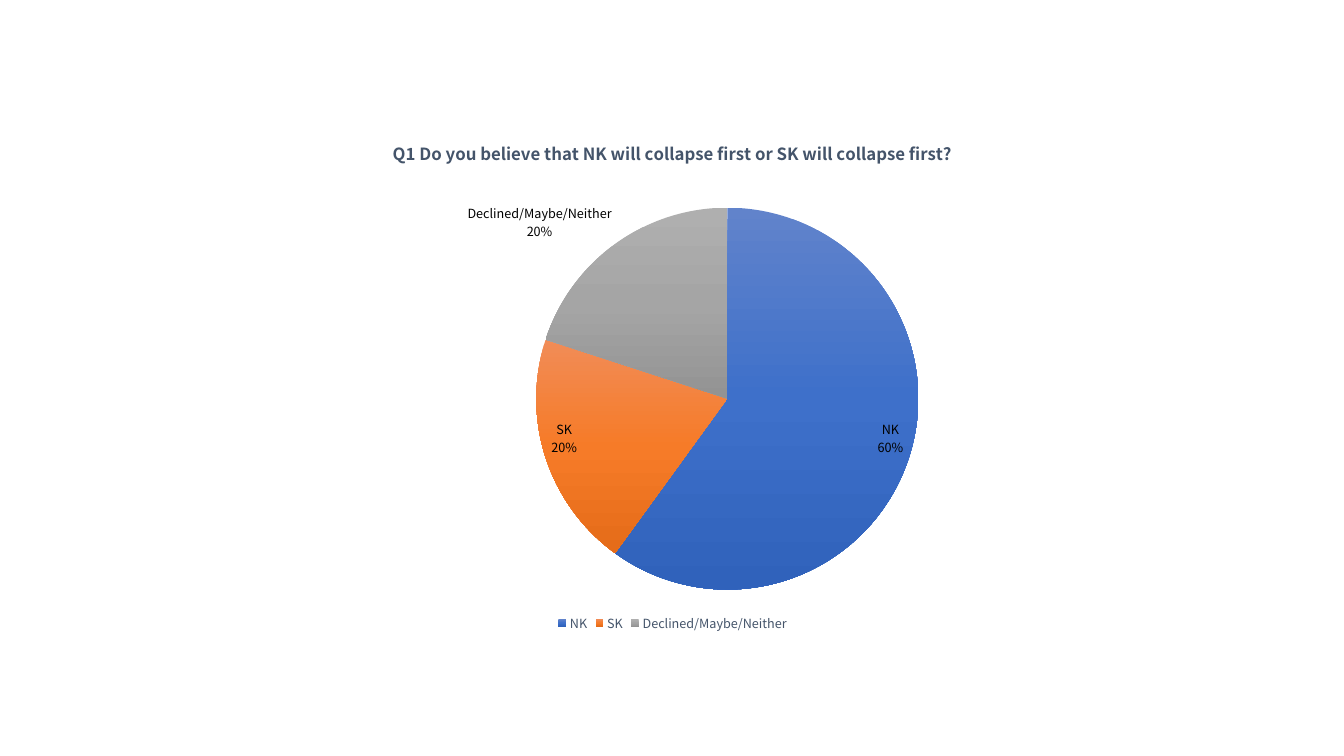
import pptx
import pptx.util
import pptx.chart.data
import pptx.dml.color
import pptx.enum.chart
import pptx.oxml
import pptx.oxml.ns
from lxml import etree

FONT = "Noto Sans CJK KR"
COLORS = {"label": "000000", "heading": "44546A"}
QUESTION = "Q1 Do you believe that NK will collapse first or SK will collapse first?"
LabelPosition = pptx.enum.chart.XL_LABEL_POSITION
ANSWERS = [
    ("NK", 60, ("6183CB", "3E70CA", "3062BB"), LabelPosition.INSIDE_END),
    ("SK", 20, ("F18C57", "F67B28", "E56C19"), LabelPosition.INSIDE_END),
    ("Declined/Maybe/Neither", 20, ("AFAFAF", "A5A5A5", "939393"), LabelPosition.OUTSIDE_END),
]
PIE_LAYOUT = {"xMode": "edge", "yMode": "edge", "x": 0.35, "y": 0.17, "w": 0.42, "h": 0.74}
LABEL_PARTS = {"showVal": "0", "showCatName": "1", "showPercent": "1"}


def style_font(font, size, color, bold=False):
    """Apply the slide's font with a size, colour and weight."""
    formats = {"name": FONT, "size": pptx.util.Pt(size), "bold": bold}
    for attribute, value in formats.items():
        setattr(font, attribute, value)
    font.color.rgb = pptx.dml.color.RGBColor.from_string(COLORS[color])


def add_child(parent, tag, **attributes):
    """Append a namespaced element to a parent."""
    return etree.SubElement(parent, pptx.oxml.ns.qn(tag), **attributes)


def shade_slice(fill, stops_list, shades):
    """Run evenly spaced shades down a slice."""
    fill.gradient_angle = 270
    for stop in list(stops_list):
        stops_list.remove(stop)
    for index, shade in enumerate(shades):
        stop = add_child(stops_list, "a:gs", pos=str(index * 50000))
        add_child(stop, "a:srgbClr", val=shade)


def format_slices(chart):
    """Colour each slice and label it with its answer and share."""
    answers = chart.plots[0].series[0]
    shares = answers.data_labels
    formats = {"show_value": False, "show_category_name": True, "show_percentage": True,
               "number_format": "0%", "number_format_is_linked": False}
    for attribute, value in formats.items():
        setattr(shares, attribute, value)
    style_font(shares.font, 9, "label")
    for index, (_, _, shades, position) in enumerate(ANSWERS):
        answer = answers.points[index]
        answer.format.fill.gradient()
        shade_slice(answer.format.fill, chart._chartSpace.xpath(".//a:gsLst")[index], shades)
        answer.format.line.fill.background()
        style_font(answer.data_label.font, 9, "label")
        answer.data_label.position = position
    for label in chart._chartSpace.xpath(".//c:dLbl"):
        for tag, value in LABEL_PARTS.items():
            label.find(pptx.oxml.ns.qn("c:" + tag)).set("val", value)
        add_child(label, "c:separator").text = "\n"


def place_pie(chart):
    """Fix the pie's place inside the chart area."""
    plot_area = chart._chartSpace.xpath(".//c:plotArea")[0]
    for layout in plot_area.findall(pptx.oxml.ns.qn("c:layout")):
        plot_area.remove(layout)
    layout = pptx.oxml.parse_xml("<c:layout %s/>" % pptx.oxml.ns.nsdecls("c"))
    plot_area.insert(0, layout)
    manual = add_child(layout, "c:manualLayout")
    add_child(manual, "c:layoutTarget", val="inner")
    for tag, value in PIE_LAYOUT.items():
        add_child(manual, "c:" + tag, val=str(value))


def add_survey_pie(slide, left, top, width, height):
    """Place the survey pie with its question and legend in the given box."""
    survey = pptx.chart.data.CategoryChartData()
    survey.categories = [answer[0] for answer in ANSWERS]
    survey.add_series(QUESTION, [answer[1] for answer in ANSWERS])
    box = [pptx.util.Inches(length) for length in (left, top, width, height)]
    chart = slide.shapes.add_chart(pptx.enum.chart.XL_CHART_TYPE.PIE, *box, survey).chart
    style_font(chart.font, 10, "label")
    chart.plots[0].vary_by_categories = True
    chart.has_title = True
    chart.chart_title.include_in_layout = False
    heading = chart.chart_title.text_frame.paragraphs[0].add_run()
    heading.text = QUESTION
    style_font(heading.font, 12, "heading", bold=True)
    chart.has_legend = True
    chart.legend.position = pptx.enum.chart.XL_LEGEND_POSITION.BOTTOM
    chart.legend.include_in_layout = False
    style_font(chart.legend.font, 9, "heading")
    format_slices(chart)
    place_pie(chart)


def main():
    """Build and save the survey slide."""
    deck = pptx.Presentation()
    deck.slide_width = pptx.util.Inches(13.33)
    deck.slide_height = pptx.util.Inches(7.5)
    slide = deck.slides.add_slide(deck.slide_layouts[6])
    add_survey_pie(slide, 2.14, 1.19, 9.06, 5.12)
    deck.save("out.pptx")


if __name__ == "__main__":
    main()
